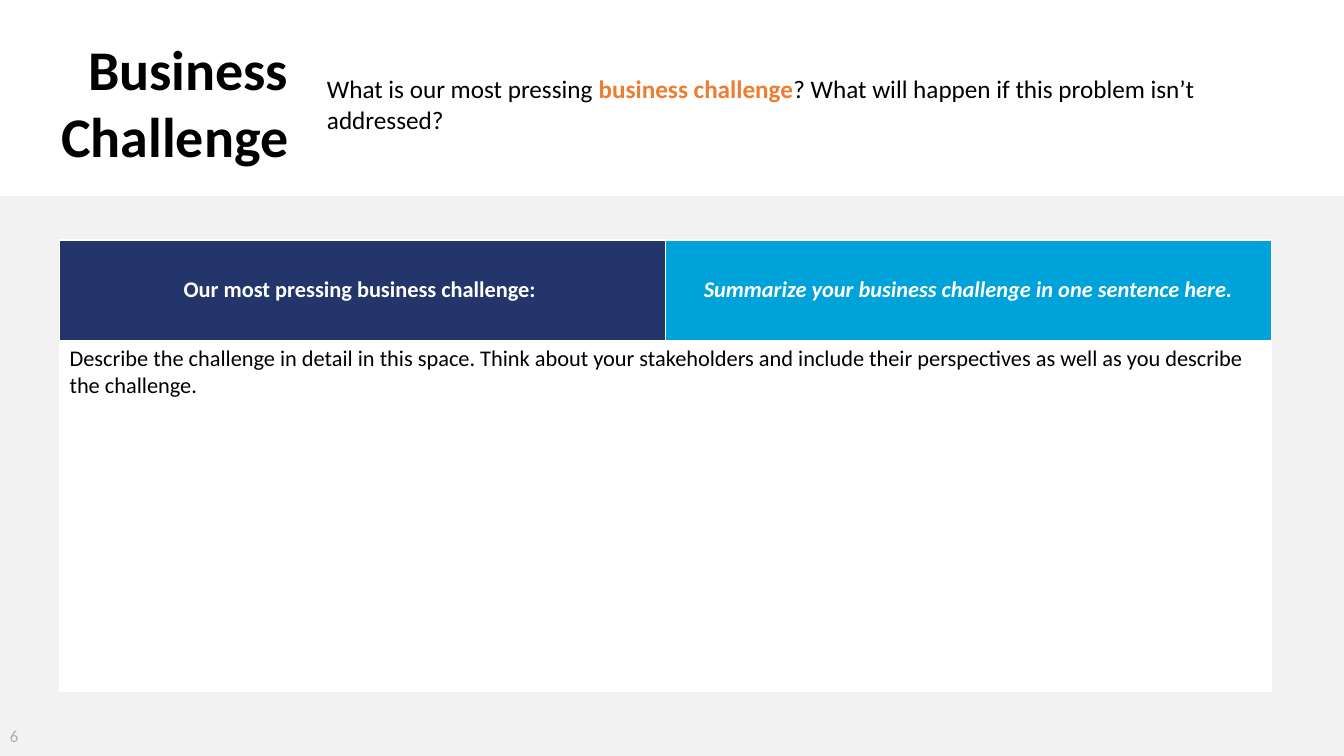
from dataclasses import dataclass

from lxml.etree import SubElement as Sub
from pptx import Presentation
from pptx.dml.color import RGBColor as RGB
from pptx.enum.shapes import MSO_SHAPE as Form
from pptx.enum.text import MSO_ANCHOR as Anchor, PP_ALIGN as Align
from pptx.oxml.ns import qn
from pptx.util import Pt


@dataclass(frozen=True)
class Theme:
    face: str = "Calibri"
    white: str = "FFFFFF"
    black: str = "000000"
    panel: str = "F2F2F2"
    navy: str = "23356A"
    sky: str = "00A3D9"
    accent: str = "EC7D31"
    muted: str = "AFABAB"
    title: int = 40
    lead: int = 18
    body: int = 16
    small: int = 12


class Board:
    def __init__(self, slide, theme):
        self.slide, self.theme = slide, theme

    def style(self, font, size, color, bold=None, italic=None):
        font.name, font.size = self.theme.face, Pt(size)
        font.bold, font.italic = bold, italic
        font.color.rgb = RGB.from_string(color)

    def paint(self, item, color):
        item.fill.solid()
        item.fill.fore_color.rgb = RGB.from_string(color)

    def rect(self, box, color):
        shape = self.slide.shapes.add_shape(Form.RECTANGLE, *map(Pt, box))
        shape.shadow.inherit = False
        self.paint(shape, color)
        shape.line.fill.background()

    def text(self, box, lines, size, color, bold=None, align=Align.LEFT, anchor=Anchor.TOP):
        frame = self.slide.shapes.add_textbox(*map(Pt, box)).text_frame
        frame.word_wrap, frame.vertical_anchor = True, anchor
        frame.text = "\n".join(lines)
        for para in frame.paragraphs:
            para.alignment = align
            self.style(para.font, size, color, bold)
        return frame.paragraphs[0]

    def rich(self, box, parts, size):
        para = self.text(box, [""], size, self.theme.black)
        for words, color, bold in parts:
            self.style(para.add_run().font, size, color, bold)
            para.runs[-1].text = words

    def table(self, box, rows, cols):
        frame = self.slide.shapes.add_table(len(rows), len(cols), *map(Pt, box))
        grid = frame.table
        grid.first_row = grid.horz_banding = False
        for row, high in zip(grid.rows, rows):
            row.height = Pt(high)
        for col, wide in zip(grid.columns, cols):
            col.width = Pt(wide)
        return grid

    def cell(self, cell, words, fill, color, bold=False, italic=False,
             align=Align.LEFT, anchor=Anchor.TOP, sides=""):
        cell.text, cell.vertical_anchor = words, anchor
        para = cell.text_frame.paragraphs[0]
        para.alignment = align
        self.style(para.font, self.theme.body, color, bold, italic)
        props = cell._tc.get_or_add_tcPr()
        for side in sides:
            line = Sub(props, qn(f"a:ln{side}"), w=str(Pt(1)))
            solid = Sub(line, qn("a:solidFill"))
            Sub(solid, qn("a:srgbClr"), val=self.theme.white)
        self.paint(cell, fill)


def main():
    deck = Presentation()
    deck.slide_width, deck.slide_height = Pt(960), Pt(540)
    theme = Theme()
    board = Board(deck.slides.add_slide(deck.slide_layouts[6]), theme)

    board.rect((0, 140, 960, 400), theme.panel)
    board.text((0, 511, 43, 29), ["6"], theme.small, theme.muted, anchor=Anchor.MIDDLE)

    grid = board.table((42.5, 171.5, 865.5, 322.5), (71.5, 251), (432.75, 432.75))
    heads = (
        ("Our most pressing business challenge: ", theme.navy, False),
        ("Summarize your business challenge in one sentence here.", theme.sky, True),
    )
    for col, (words, fill, italic) in enumerate(heads):
        board.cell(grid.cell(0, col), words, fill, theme.white, True, italic,
                   Align.CENTER, Anchor.MIDDLE, "LRT")
    grid.cell(1, 0).merge(grid.cell(1, 1))
    board.cell(
        grid.cell(1, 0),
        "Describe the challenge in detail in this space. Think about your stakeholders "
        "and include their perspectives as well as you describe the challenge.",
        theme.white, theme.black)

    board.text((0, 21, 213, 104.5), ["Business", "Challenge"],
               theme.title, theme.black, True, Align.RIGHT)
    board.rich((226.5, 49, 681, 51), (
        ("What is our most pressing ", theme.black, False),
        ("business challenge", theme.accent, True),
        ("? What will happen if this problem isn’t addressed?", theme.black, False),
    ), theme.lead)
    deck.save("out.pptx")


if __name__ == "__main__":
    main()
